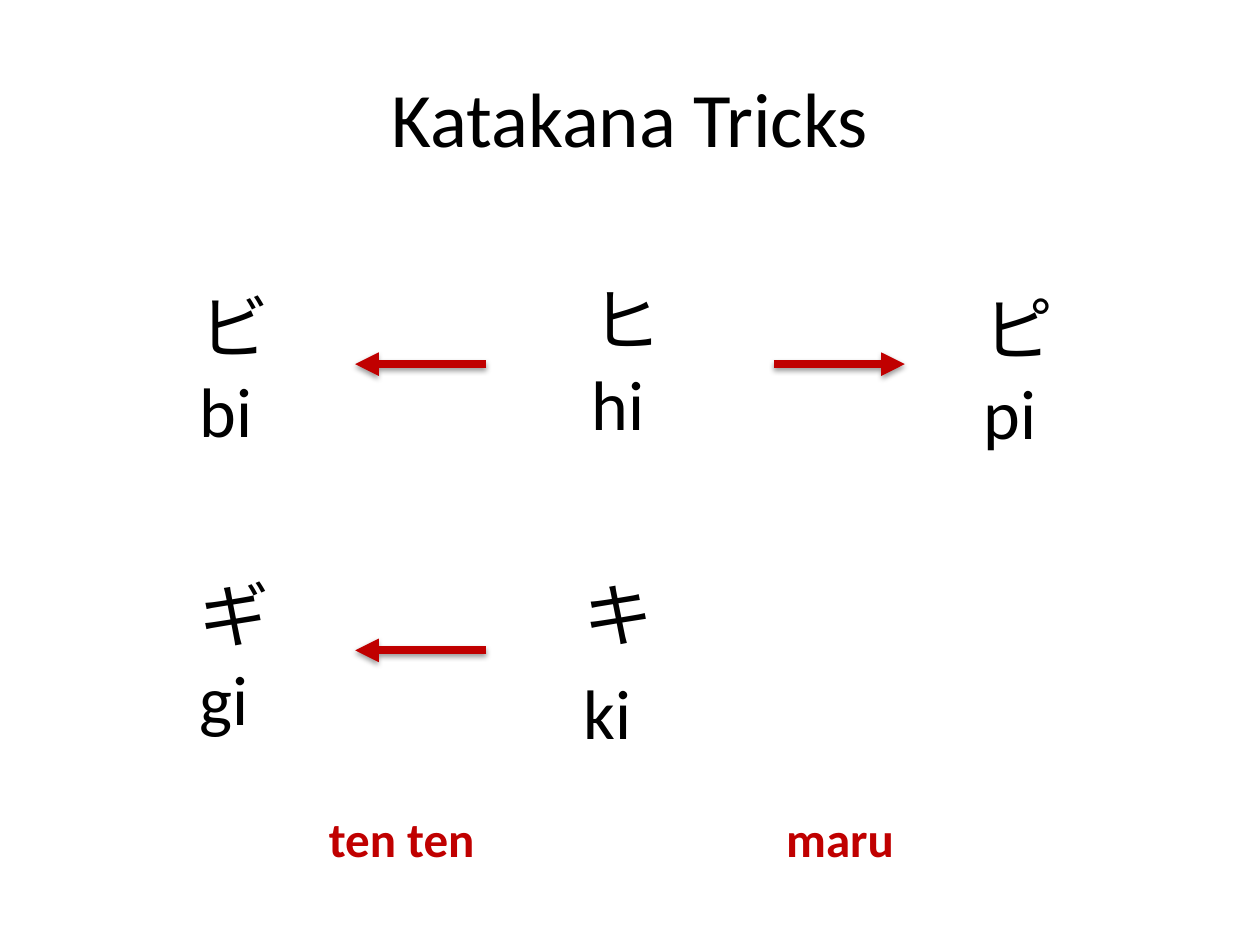
from lxml.etree import SubElement as Sub
from pptx import Presentation
from pptx.dml.color import RGBColor
from pptx.enum.shapes import MSO_CONNECTOR as Conn
from pptx.enum.text import MSO_ANCHOR as Anchor, PP_ALIGN as Align
from pptx.oxml.ns import qn
from pptx.util import Cm, Pt

# Content: "\v" breaks the line, "\n" starts a paragraph
TITLE = "Katakana Tricks"
KANA = [  # text, left, top
    ("キ\nki", 11.51, 11.4),
    ("ギ\vgi", 3.78, 11.4),
    ("ヒ\vhi", 11.68, 5.46),
    ("ビ\vbi", 3.78, 5.59),
    ("ピ\vpi", 19.58, 5.64),
]
MARKS = [("ten ten", 6.38, 3.48), ("maru", 15.6, 2.72)]  # text, left, width
ARROWS = [(9.8, -1, 7.34), (9.8, -1, 13.11), (15.6, 1, 7.34)]  # start, way, y
REACH = 2.64
BLACK, RED = "000000", "C00000"

# Formats
HEAD = {"size": Pt(44), "color": BLACK, "bold": False}
SIGN = {"size": Pt(40), "color": BLACK, "bold": False}
MARK = {"size": Pt(28), "color": RED, "bold": True}


def rgb(code):
    return RGBColor.from_string(code)


def write(slide, text, box, look, wrap=True, **para):
    frame = slide.shapes.add_textbox(*map(Cm, box)).text_frame
    frame.word_wrap = wrap
    frame.text = text
    for par in frame.paragraphs:
        for key, val in para.items():
            setattr(par, key, val)
        for run in par.runs:
            run.font.name = "Calibri"
            for key, val in look.items():
                if key == "color":
                    run.font.color.rgb = rgb(val)
                else:
                    setattr(run.font, key, val)
    return frame


def arrow(slide, start, way, y):
    end = start + way * REACH
    link = slide.shapes.add_connector(
        Conn.STRAIGHT, Cm(start), Cm(y), Cm(end), Cm(y))
    link.line.color.rgb = rgb(RED)
    link.line.width = Pt(4.5)
    Sub(link.line._get_or_add_ln(), qn("a:tailEnd"), type="triangle")
    # Soft shadow straight below
    glow = Sub(link._element.spPr, qn("a:effectLst"))
    cast = Sub(glow, qn("a:outerShdw"), blurRad=str(Pt(3.1)),
               dist=str(Pt(1.6)), dir="5400000", rotWithShape="0")
    tone = Sub(cast, qn("a:srgbClr"), val=BLACK)
    Sub(tone, qn("a:alpha"), val="38000")


def main():
    deck = Presentation()
    deck.slide_width, deck.slide_height = Cm(25.4), Cm(19.05)
    slide = deck.slides.add_slide(deck.slide_layouts[6])

    # Title
    head = write(slide, TITLE, (1.27, 0.76, 22.86, 3.18), HEAD,
                 alignment=Align.CENTER)
    head.vertical_anchor = Anchor.MIDDLE

    # Kana with their readings
    for text, left, top in KANA:
        write(slide, text, (left, top, 2.03, 3.43), SIGN, space_before=Pt(8))

    # Names of the marks
    for text, left, width in MARKS:
        write(slide, text, (left, 16.18, width, 1.45), MARK, wrap=False)

    # Arrows
    for item in ARROWS:
        arrow(slide, *item)

    deck.save("out.pptx")


if __name__ == "__main__":
    main()
